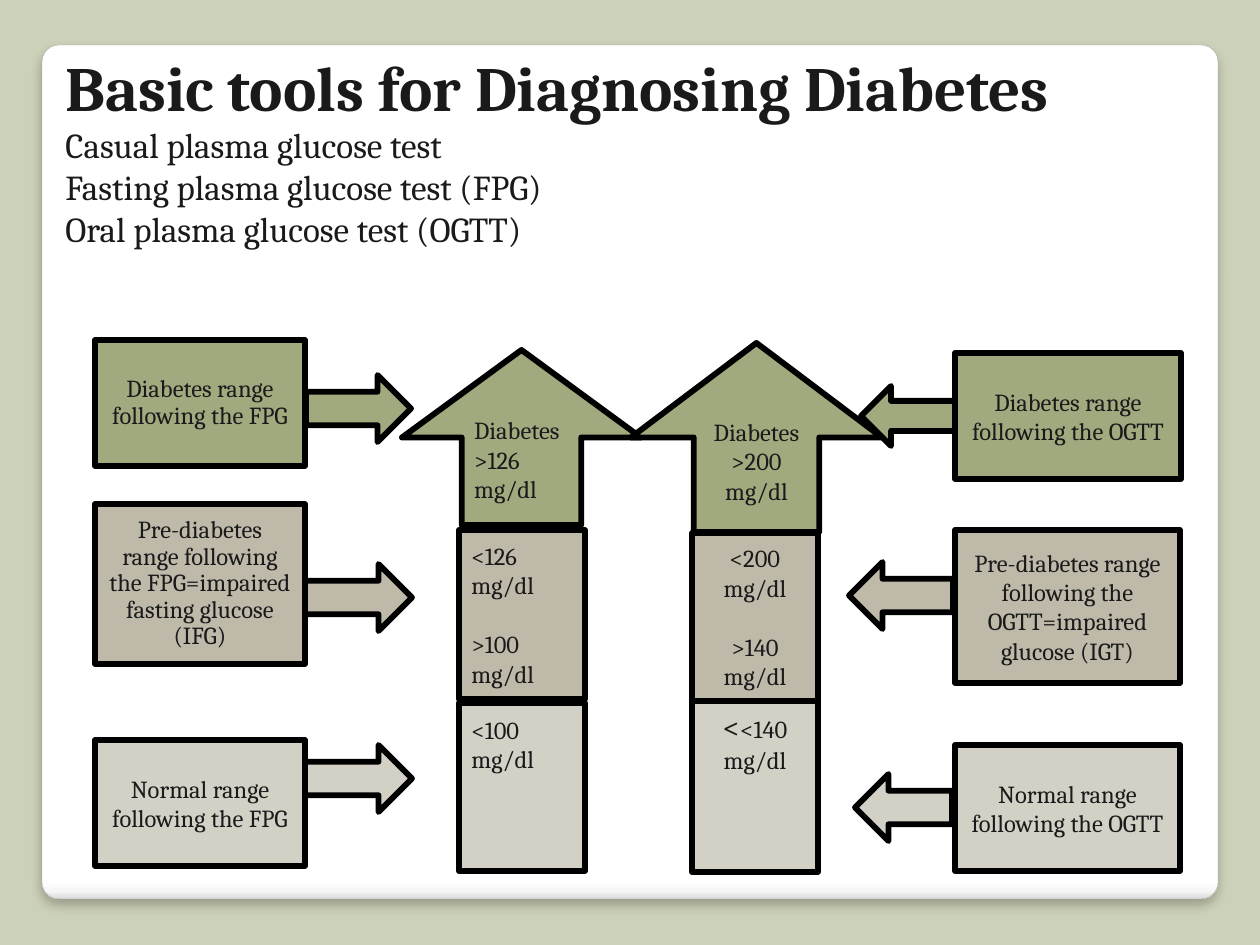
from lxml.etree import SubElement
from pptx import Presentation
from pptx.dml.color import RGBColor
from pptx.enum.shapes import MSO_SHAPE
from pptx.enum.text import MSO_ANCHOR, PP_ALIGN
from pptx.oxml import parse_xml
from pptx.oxml.ns import nsdecls, qn
from pptx.util import Inches, Pt

FONT = "Cambria"
COLORS = {
    "background": "CCD1B9", "panel": "FFFFFF", "panel_line": "A4A4A4",
    "diabetes": "A1AA7E", "prediabetes": "BEB9A9", "normal": "D3D1C6",
    "outline": "000000", "text": "1A1A1A",
}
PANEL_STOPS = [(0, "FFFFFF"), (98, "FFFFFF"), (99, "F7F7F7"), (100, "DADADA")]
LEVELS = ["diabetes", "prediabetes", "normal"]
LEFT, CENTER = PP_ALIGN.LEFT, PP_ALIGN.CENTER


def px(value):
    """Turn pixels into EMU at 126 pixels to the inch."""
    return Inches(value / 126)


def color(name):
    """Return the named colour."""
    return RGBColor.from_string(COLORS[name])


def add_run(paragraph, text, size, bold=False):
    """Add one run in the slide's font."""
    run = paragraph.add_run()
    run.text = text
    run.font.name = FONT
    run.font.size = Pt(size)
    run.font.bold = bold
    run.font.color.rgb = color("text")


def add_figure(slide, preset, box, fill, line="outline", line_width=3.35):
    """Add a filled and outlined preset shape without a shadow."""
    shape = slide.shapes.add_shape(preset, *map(px, box))
    shape.shadow.inherit = False
    shape.fill.solid()
    shape.fill.fore_color.rgb = color(fill)
    shape.line.color.rgb = color(line)
    shape.line.width = Pt(line_width)
    return shape


def add_panel(slide):
    """Add the white rounded panel with its shaded foot and soft shadow."""
    panel = add_figure(slide, MSO_SHAPE.ROUNDED_RECTANGLE, (42, 45, 1176, 854),
                       "panel", "panel_line", 0.16)
    panel.adjustments[0] = 0.02
    stops = "".join(f'<a:gs pos="{position * 1000}"><a:srgbClr val="{value}"/></a:gs>'
                    for position, value in PANEL_STOPS)
    gradient = parse_xml(f'<a:gradFill {nsdecls("a")}><a:gsLst>{stops}</a:gsLst>'
                         '<a:lin ang="5400000" scaled="0"/></a:gradFill>')
    properties = panel.element.spPr
    properties.replace(properties.find(qn("a:solidFill")), gradient)
    shadow = SubElement(properties.find(qn("a:effectLst")), qn("a:outerShdw"),
                        blurRad=str(Pt(6)), dist=str(Pt(4)), dir="5400000",
                        algn="t", rotWithShape="0")
    tint = SubElement(shadow, qn("a:srgbClr"), val=COLORS["outline"])
    SubElement(tint, qn("a:alpha"), val="25000")


def add_heading(slide, title, tests):
    """Add the title with the list of tests under it."""
    frame = slide.shapes.add_textbox(*map(px, (53, 42, 1086, 257))).text_frame
    frame.word_wrap = True
    add_run(frame.paragraphs[0], title, 36, bold=True)
    for test in tests:
        add_run(frame.add_paragraph(), test, 20)


def add_text_figure(slide, preset, box, fill, paragraphs, align=CENTER,
                    anchor=MSO_ANCHOR.MIDDLE, line_spacing=None, gap=0):
    """Add a shape whose paragraphs are lists of (text, size) runs."""
    frame = add_figure(slide, preset, box, fill).text_frame
    frame.word_wrap = True
    frame.vertical_anchor = anchor
    for index, runs in enumerate(paragraphs):
        paragraph = frame.add_paragraph() if index else frame.paragraphs[0]
        paragraph.alignment = align
        paragraph.line_spacing = line_spacing
        if index:
            paragraph.space_before = Pt(gap)
        for text, size in runs:
            add_run(paragraph, text, size)
    return frame


def add_range_labels(slide, arrow_preset, rows):
    """Add one side's range labels, each with its block arrow."""
    for level, (text, label_box, arrow_box, line_spacing) in zip(LEVELS, rows):
        add_figure(slide, arrow_preset, arrow_box, level)
        add_text_figure(slide, MSO_SHAPE.RECTANGLE, label_box, level,
                        [[(text, 14)]], line_spacing=line_spacing)


def add_scale(slide, boxes, top, middle, bottom, align, bottom_inset):
    """Add one glucose scale: an up arrow above two stacked boxes."""
    add_text_figure(slide, MSO_SHAPE.UP_ARROW, boxes[0], LEVELS[0], top, align)
    add_text_figure(slide, MSO_SHAPE.RECTANGLE, boxes[1], LEVELS[1], middle, align, gap=17)
    frame = add_text_figure(slide, MSO_SHAPE.RECTANGLE, boxes[2], LEVELS[2],
                            bottom, align, MSO_ANCHOR.TOP)
    frame.margin_top = px(bottom_inset)


def main():
    """Build the slide and save it."""
    presentation = Presentation()
    presentation.slide_width, presentation.slide_height = px(1260), px(945)
    slide = presentation.slides.add_slide(presentation.slide_layouts[6])
    slide.background.fill.solid()
    slide.background.fill.fore_color.rgb = color("background")

    add_panel(slide)
    add_heading(slide, "Basic tools for Diagnosing Diabetes",
                ["Casual plasma glucose test", "Fasting plasma glucose test (FPG)",
                 "Oral plasma glucose test (OGTT)"])
    add_range_labels(slide, MSO_SHAPE.RIGHT_ARROW, [
        ("Diabetes range following the FPG",
         (95, 340, 210, 126), (306, 375, 105, 67), 0.9),
        ("Pre-diabetes range following the FPG=impaired fasting glucose (IFG)",
         (95, 504, 210, 160), (305, 564, 107, 67), 0.9),
        ("Normal range following the FPG",
         (95, 740, 210, 126), (305, 745, 107, 67), None),
    ])
    add_range_labels(slide, MSO_SHAPE.LEFT_ARROW, [
        ("Diabetes range following the OGTT",
         (955, 353, 226, 126), (861, 386, 97, 60), None),
        ("Pre-diabetes range following the OGTT=impaired glucose (IGT)",
         (955, 530, 225, 153), (849, 562, 104, 67), None),
        ("Normal range following the OGTT",
         (955, 745, 225, 126), (855, 774, 97, 67), None),
    ])
    add_scale(slide, [(402, 350, 239, 175), (459, 530, 126, 169), (459, 703, 126, 168)],
              [[("Diabetes", 14)], [(">126 mg/dl", 14)]],
              [[("<126 mg/dl", 14)], [(">100 mg/dl", 14)]],
              [[("<100 mg/dl", 14)]], LEFT, 12)
    add_scale(slide, [(631, 343, 251, 189), (692, 533, 126, 168), (692, 701, 126, 171)],
              [[("Diabetes", 14)], [(">200 mg/dl", 14)]],
              [[("<200 mg/dl", 14)], [(">140 mg/dl", 14)]],
              [[("<", 18), ("<140 mg/dl", 14)]], CENTER, 6)
    presentation.save("out.pptx")


if __name__ == "__main__":
    main()
